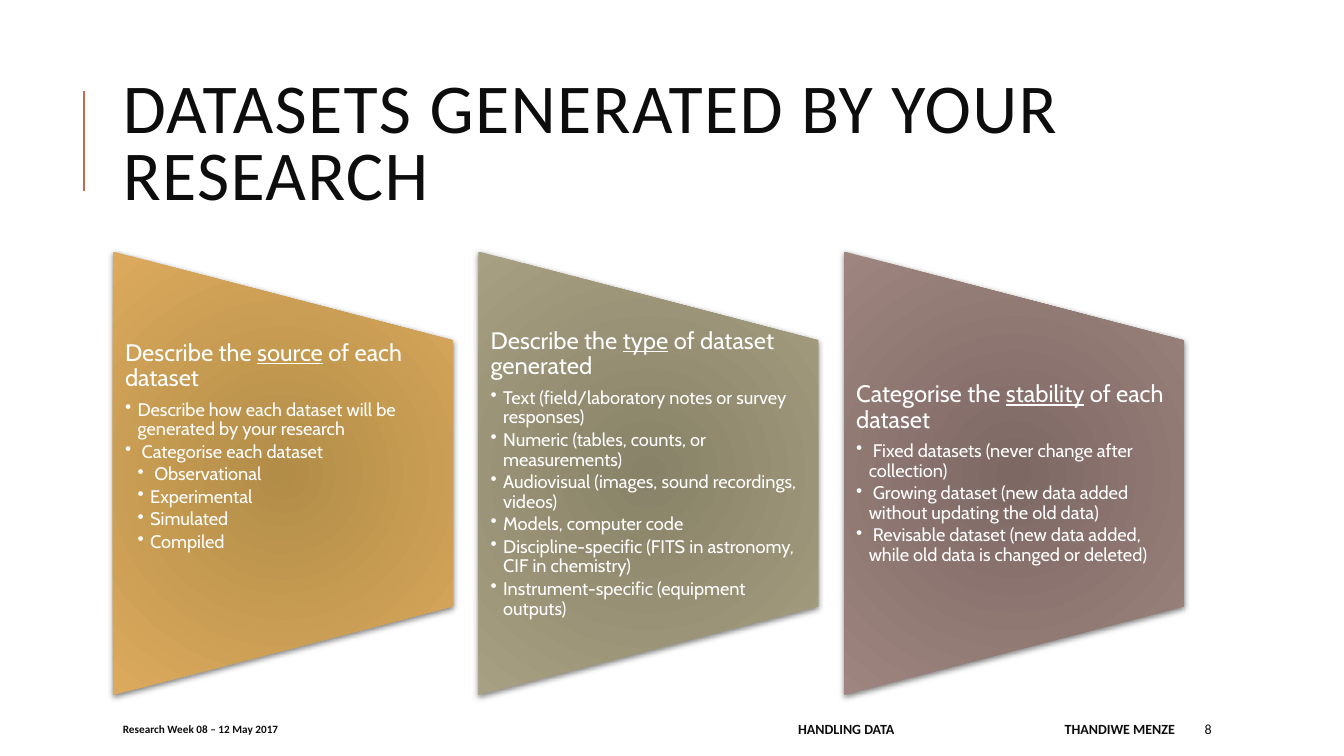
import lxml.etree
import pptx
import pptx.dml.color
import pptx.enum.shapes
import pptx.enum.text
import pptx.oxml
import pptx.oxml.ns
import pptx.util

RGBColor = pptx.dml.color.RGBColor
Anchor = pptx.enum.text.MSO_ANCHOR
Align = pptx.enum.text.PP_ALIGN

INK = RGBColor(0x0D, 0x0D, 0x0D)
WHITE = RGBColor(0xFF, 0xFF, 0xFF)
RUST = RGBColor(0xC6, 0x69, 0x51)
GOLD = RGBColor(0xB2, 0x8D, 0x48), RGBColor(0xDC, 0xAA, 0x5D)
OLIVE = RGBColor(0x88, 0x82, 0x68), RGBColor(0xA8, 0xA0, 0x82)
MAUVE = RGBColor(0x7E, 0x68, 0x64), RGBColor(0x9E, 0x85, 0x7F)

LEFT = 8.4
CARD_WIDTH, CARD_PITCH = 25.28, 27.2
FOOTER_TOP, FOOTER_HEIGHT = 94.4, 4

# Each card: colours, anchor, heading parts (the middle one underlined), (level, text) items
CARDS = [
    (GOLD, Anchor.TOP, ("Describe the ", "source", " of each dataset"), [
        (1, "Describe how each dataset will be generated by your research"),
        (1, " Categorise each dataset"),
        (2, " Observational"),
        (2, "Experimental"),
        (2, "Simulated"),
        (2, "Compiled"),
    ]),
    (OLIVE, Anchor.MIDDLE, ("Describe the ", "type", " of dataset generated"), [
        (1, "Text (field/laboratory notes or survey responses)"),
        (1, "Numeric (tables, counts, or measurements)"),
        (1, "Audiovisual (images, sound recordings, videos)"),
        (1, "Models, computer code"),
        (1, "Discipline-specific (FITS in astronomy, CIF in chemistry)"),
        (1, "Instrument-specific (equipment outputs)"),
    ]),
    (MAUVE, Anchor.MIDDLE, ("Categorise the ", "stability", " of each dataset"), [
        (1, " Fixed datasets (never change after collection)"),
        (1, " Growing dataset (new data added without updating the old data)"),
        (1, " Revisable dataset (new data added, while old data is changed or deleted)"),
    ]),
]


def add_xml(parent, tag, **attributes):
    child = lxml.etree.SubElement(parent, pptx.oxml.ns.qn(tag))
    for name, value in attributes.items():
        child.set(name, str(value))
    return child


class SlideBuilder:
    """Places elements on one slide; lengths are percentages of its size."""

    title_font = "Calibri"
    card_font = "Cabin"

    def __init__(self, presentation):
        self.slide = presentation.slides.add_slide(presentation.slide_layouts[6])
        self.column = presentation.slide_width / 100
        self.row = presentation.slide_height / 100

    def box(self, left, top, width, height):
        return (round(left * self.column), round(top * self.row),
                round(width * self.column), round(height * self.row))

    def rule(self, left, top, bottom):
        x, y, _, height = self.box(left, top, 0, bottom - top)
        line = self.slide.shapes.add_connector(
            pptx.enum.shapes.MSO_CONNECTOR.STRAIGHT, x, y + height, x, y)
        line.line.color.rgb = RUST
        line.line.width = pptx.util.Pt(1.5)
        add_xml(line._element.spPr, "a:effectLst")

    def frame(self, left, top, width, height, anchor=Anchor.MIDDLE):
        shape = self.slide.shapes.add_textbox(*self.box(left, top, width, height))
        shape.text_frame.word_wrap = True
        shape.text_frame.vertical_anchor = anchor
        return shape.text_frame

    def run(self, paragraph, text, font, size, color, bold=False, underline=False):
        run = paragraph.add_run()
        run.text = text
        run.font.name = font
        run.font.size = pptx.util.Pt(size)
        run.font.color.rgb = color
        run.font.bold = bold
        run.font.underline = underline
        return run

    def label(self, text, left, top, width, height, size, bold=False, align=Align.LEFT):
        paragraph = self.frame(left, top, width, height).paragraphs[0]
        paragraph.alignment = align
        self.run(paragraph, text, self.title_font, size, INK, bold)
        return paragraph

    def title(self, text, left, top, width, height):
        paragraph = self.label(text, left, top, width, height, 50)
        paragraph.line_spacing = 0.8
        paragraph.runs[0].font._element.set("spc", "100")

    def trapezoid(self, left, top, width, height, colors):
        """Fill the given box with a manual-operation shape turned on its side."""
        x, y, across, down = self.box(left, top, width, height)
        inset = (down - across) // 2
        shape = self.slide.shapes.add_shape(
            pptx.enum.shapes.MSO_SHAPE.FLOWCHART_MANUAL_OPERATION,
            x - inset, y + inset, down, across)
        shape.rotation = 270
        shape.line.fill.background()
        shape.fill.gradient()
        for stop, color, position in zip(shape.fill.gradient_stops, colors, (0, 1)):
            stop.color.rgb = color
            stop.position = position
        properties = shape._element.spPr
        gradient = properties.find(pptx.oxml.ns.qn("a:gradFill"))
        gradient.remove(gradient.find(pptx.oxml.ns.qn("a:lin")))
        path = add_xml(gradient, "a:path", path="circle")
        add_xml(path, "a:fillToRect", l=100000, t=100000, r=100000, b=100000)
        shape.shadow.inherit = False
        effects = properties.find(pptx.oxml.ns.qn("a:effectLst"))
        shadow = add_xml(effects, "a:outerShdw", blurRad=pptx.util.Pt(4),
                         dist=pptx.util.Pt(1), dir=90 * 60000, rotWithShape=0)
        add_xml(add_xml(shadow, "a:srgbClr", val="000000"), "a:alpha", val=50000)

    def bullet(self, paragraph, level):
        indent = pptx.util.Inches(0.125)
        properties = paragraph._p.get_or_add_pPr()
        properties.set("marL", str(indent * level))
        properties.set("indent", str(-indent))
        add_xml(properties, "a:buChar", char="•")
        paragraph.level = level

    def card_text(self, left, top, width, height, anchor, heading, items):
        frame = self.frame(left, top, width, height, anchor)
        frame.margin_left = frame.margin_right = pptx.util.Inches(0.12)
        frame.margin_top = frame.margin_bottom = 0
        paragraph = frame.paragraphs[0]
        paragraph.line_spacing = 0.9
        paragraph.space_after = pptx.util.Pt(6)
        for position, part in enumerate(heading):
            self.run(paragraph, part, self.card_font, 17, WHITE, underline=position == 1)
        for level, text in items:
            paragraph = frame.add_paragraph()
            paragraph.line_spacing = 0.9
            paragraph.space_after = pptx.util.Pt(2)
            self.bullet(paragraph, level)
            self.run(paragraph, text, self.card_font, 13, WHITE)


def main():
    presentation = pptx.Presentation()
    presentation.slide_width = pptx.util.Inches(13.33)
    presentation.slide_height = pptx.util.Inches(7.5)
    builder = SlideBuilder(presentation)

    builder.rule(6.23, 12, 25.33)
    builder.title("DATASETS GENERATED BY YOUR RESEARCH", LEFT, 8.53, 79.74, 21.87)

    for index, (colors, anchor, heading, items) in enumerate(CARDS):
        left = LEFT + index * CARD_PITCH
        builder.trapezoid(left, 33.27, CARD_WIDTH, 58.67, colors)
        builder.card_text(left, 45.07, CARD_WIDTH, 35.2, anchor, heading, items)

    for text, left, width, size, bold, align in (
        ("Research Week 08 – 12 May 2017", LEFT, 17.7, 8, True, Align.LEFT),
        ("HANDLING DATA", 50, 17.28, 10, True, Align.RIGHT),
        ("THANDIWE MENZE", 70, 18.15, 10, True, Align.RIGHT),
        ("8", 88.9, 7.95, 10, False, Align.LEFT),
    ):
        builder.label(text, left, FOOTER_TOP, width, FOOTER_HEIGHT, size, bold, align)

    presentation.save("out.pptx")


if __name__ == "__main__":
    main()
